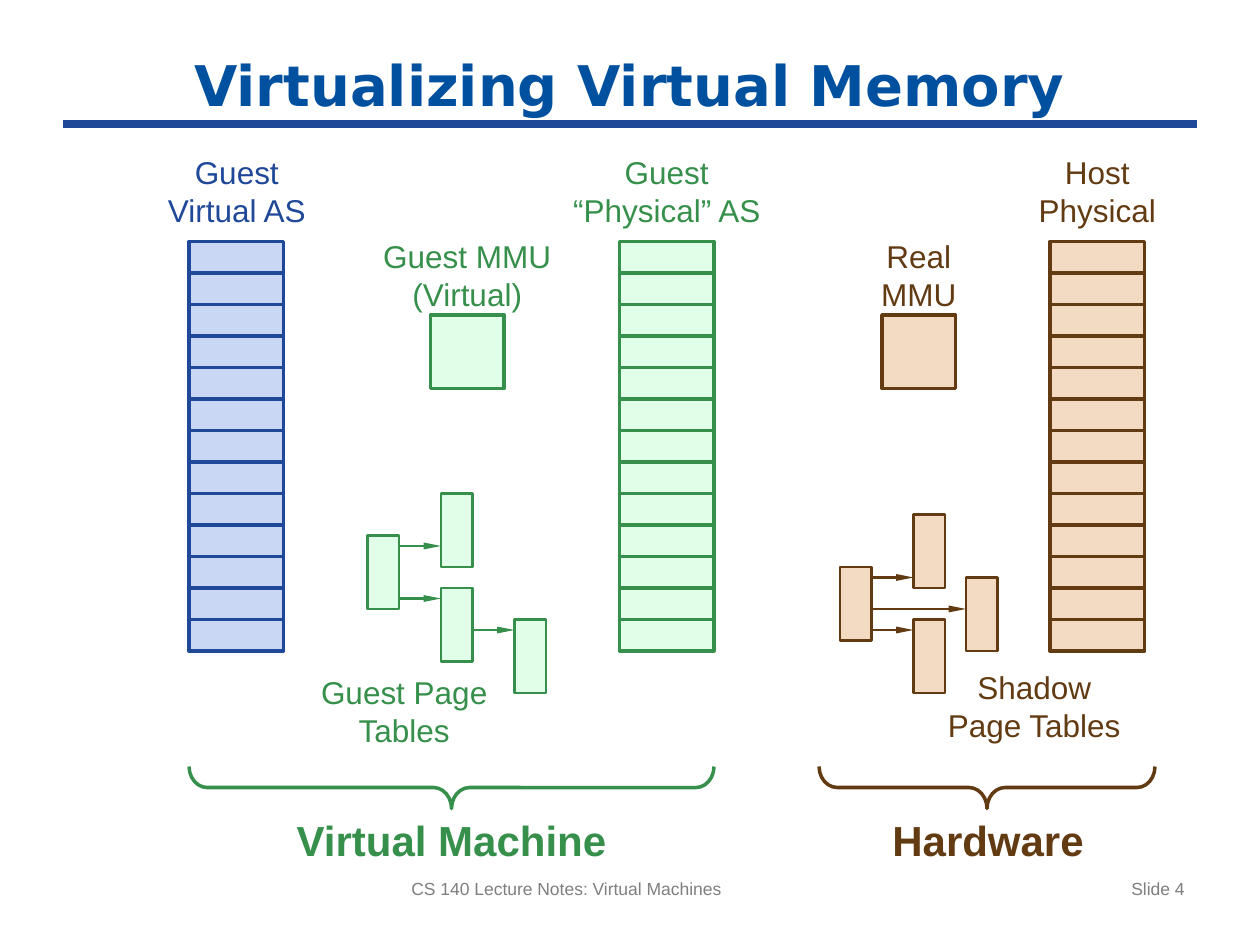
from typing import NamedTuple

from lxml.etree import SubElement
from pptx import Presentation
from pptx.dml.color import RGBColor
from pptx.enum.shapes import MSO_CONNECTOR as Connector, MSO_SHAPE as Shape
from pptx.enum.text import MSO_ANCHOR as Anchor, PP_ALIGN as Align
from pptx.oxml.ns import qn
from pptx.util import Emu, Pt

PX = 7620
BLUE = RGBColor(0x1F, 0x48, 0x99)
PALE_BLUE = RGBColor(0xC9, 0xD7, 0xF4)
GREEN = RGBColor(0x36, 0x90, 0x4B)
PALE_GREEN = RGBColor(0xE1, 0xFF, 0xE8)
BROWN = RGBColor(0x63, 0x3B, 0x13)
PALE_BROWN = RGBColor(0xF3, 0xDB, 0xC3)
TITLE_BLUE = RGBColor(0x00, 0x50, 0xA0)
GRAY = RGBColor(0x7F, 0x7F, 0x7F)

COLUMN_TOP, COLUMN_W, ROW_H, ROWS = 230, 90, 30, 13
MMU_TOP, MMU_SIDE = 300, 70
PAGE_W, PAGE_H = 30, 70
BRACE_MID, BRACE_DEPTH = 750, 40


class Theme(NamedTuple):
    line: RGBColor
    fill: RGBColor


class Label(NamedTuple):
    text: str
    x: int
    y: int
    w: int
    color: RGBColor
    wrap: bool = True


class Arrow(NamedTuple):
    x1: int
    x2: int
    y: int


class PageTables(NamedTuple):
    theme: Theme
    pages: list[tuple[int, int]]
    arrows: list[Arrow]


class Side(NamedTuple):
    name: str
    name_x: int
    left: int
    right: int
    mmu_x: int
    theme: Theme


GUEST_VIRTUAL = Theme(BLUE, PALE_BLUE)
GUEST = Theme(GREEN, PALE_GREEN)
HOST = Theme(BROWN, PALE_BROWN)

COLUMNS = [(180, GUEST_VIRTUAL), (590, GUEST), (1000, HOST)]
LABELS = [
    Label("Guest\nVirtual AS", 147, 140, 157, BLUE, wrap=False),
    Label("Guest\n“Physical” AS", 530, 140, 210, GREEN),
    Label("Host\nPhysical", 970, 140, 150, BROWN),
    Label("Guest MMU\n(Virtual)", 350, 220, 190, GREEN),
    Label("Real MMU", 810, 220, 130, BROWN),
    Label("Guest Page Tables", 290, 635, 190, GREEN),
    Label("Shadow Page Tables", 890, 630, 190, BROWN),
]
TABLES = [
    PageTables(GUEST, [(350, 510), (420, 470), (420, 560), (490, 590)],
               [Arrow(380, 420, 520), Arrow(380, 420, 570), Arrow(450, 490, 600)]),
    PageTables(HOST, [(800, 540), (870, 490), (920, 550), (870, 590)],
               [Arrow(830, 870, 550), Arrow(830, 920, 580), Arrow(830, 870, 600)]),
]
SIDES = [
    Side("Virtual Machine", 265, 180, 680, 410, GUEST),
    Side("Hardware", 776, 780, 1100, 840, HOST),
]


def px(*lengths: int) -> list[Emu]:
    return [Emu(n * PX) for n in lengths]


def add_text(s, text: str, x: int, y: int, w: int, h: int, *, size: int = 18,
             color: RGBColor = GRAY, font: str = "Arial", bold: bool = False,
             align=Align.CENTER, anchor=Anchor.TOP, wrap: bool = True) -> None:
    tf = s.shapes.add_textbox(*px(x, y, w, h)).text_frame
    tf.word_wrap = wrap
    tf.vertical_anchor = anchor
    p = tf.paragraphs[0]
    p.text = text
    p.alignment = align
    for r in p.runs:
        r.font.name = font
        r.font.size = Pt(size)
        r.font.bold = bold
        r.font.color.rgb = color


def add_line(s, x1: int, x2: int, y: int, color: RGBColor,
             width: float = 2, arrow: bool = False) -> None:
    sp = s.shapes.add_connector(Connector.STRAIGHT, *px(x1, y, x2, y))
    sp.line.color.rgb = color
    sp.line.width = Pt(width)
    if arrow:
        SubElement(sp.line._get_or_add_ln(), qn("a:tailEnd"),
                   type="triangle", w="sm", len="lg")
    SubElement(sp._element.spPr, qn("a:effectLst"))


def add_box(s, x: int, y: int, w: int, h: int, theme: Theme, width: float = 2) -> None:
    sp = s.shapes.add_shape(Shape.RECTANGLE, *px(x, y, w, h))
    sp.shadow.inherit = False
    sp.fill.solid()
    sp.fill.fore_color.rgb = theme.fill
    sp.line.color.rgb = theme.line
    sp.line.width = Pt(width)


def add_column(s, x: int, theme: Theme) -> None:
    add_box(s, x, COLUMN_TOP, COLUMN_W, ROWS * ROW_H, theme)
    for row in range(1, ROWS):
        add_line(s, x, x + COLUMN_W, COLUMN_TOP + row * ROW_H, theme.line)


def add_page_tables(s, tables: PageTables) -> None:
    for x, y in tables.pages:
        add_box(s, x, y, PAGE_W, PAGE_H, tables.theme, 1.5)
    for arrow in tables.arrows:
        add_line(s, *arrow, tables.theme.line, 1.5, arrow=True)


def add_brace(s, left: int, right: int, color: RGBColor) -> None:
    span = right - left
    x = (left + right - BRACE_DEPTH) // 2
    sp = s.shapes.add_shape(Shape.RIGHT_BRACE,
                            *px(x, BRACE_MID - span // 2, BRACE_DEPTH, span))
    sp.rotation = 90
    sp.adjustments[0] = 0.43
    sp.shadow.inherit = False
    sp.fill.background()
    sp.line.color.rgb = color
    sp.line.width = Pt(2)


def main() -> None:
    prs = Presentation()
    prs.slide_width, prs.slide_height = px(1200, 900)
    s = prs.slides.add_slide(prs.slide_layouts[6])

    add_line(s, 60, 1140, 118, BLUE, 4.5)
    add_text(s, "Virtualizing Virtual Memory", 60, 40, 1080, 80, size=32,
             color=TITLE_BLUE, font="DejaVu Sans", bold=True, anchor=Anchor.MIDDLE)
    add_text(s, "CS 140 Lecture Notes: Virtual Machines", 380, 830, 450, 52,
             size=10, align=Align.LEFT)
    add_text(s, "Slide 4", 860, 830, 280, 52, size=10, align=Align.RIGHT)

    for x, theme in COLUMNS:
        add_column(s, x, theme)
    for label in LABELS:
        add_text(s, label.text, label.x, label.y, label.w, 85,
                 color=label.color, wrap=label.wrap)
    for tables in TABLES:
        add_page_tables(s, tables)
    for side in SIDES:
        add_box(s, side.mmu_x, MMU_TOP, MMU_SIDE, MMU_SIDE, side.theme)
        add_brace(s, side.left, side.right, side.theme.line)
        add_text(s, side.name, side.name_x, 770, 330, 60, size=24,
                 color=side.theme.line, bold=True)

    prs.save("out.pptx")


if __name__ == "__main__":
    main()
